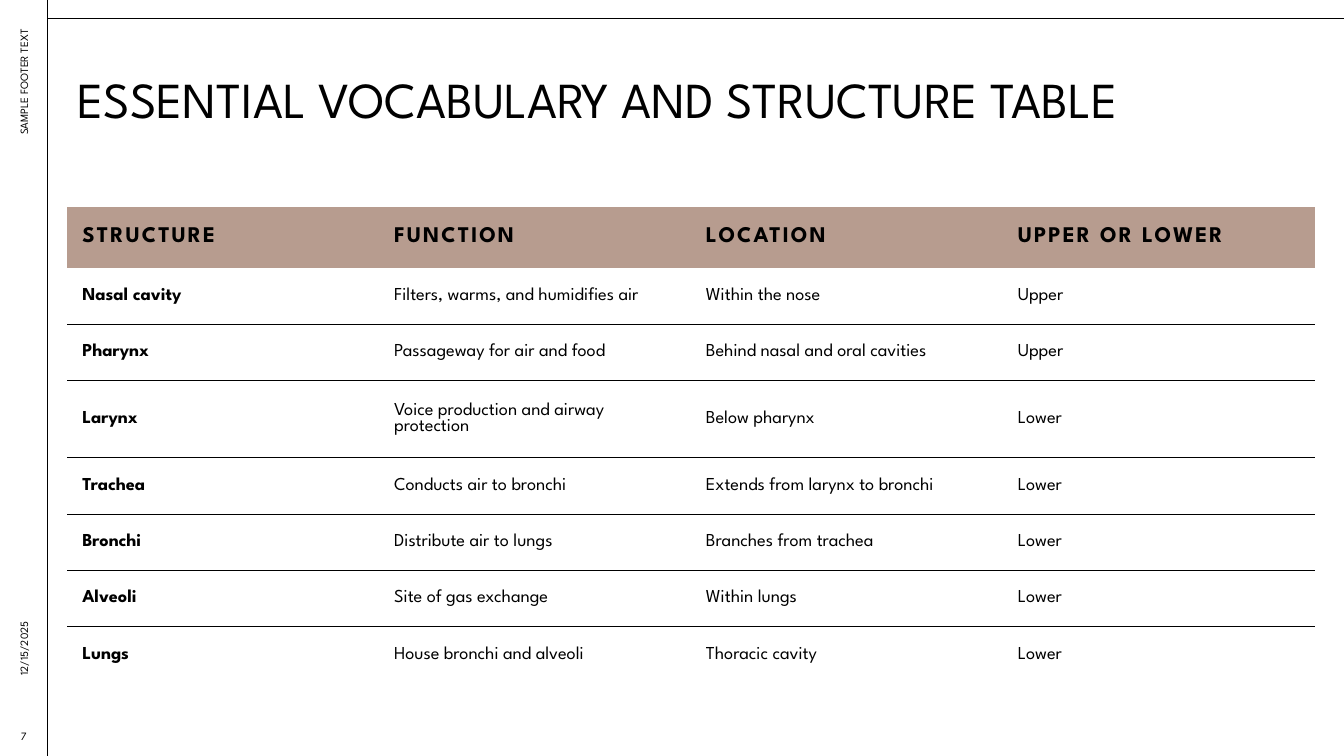
from lxml.etree import SubElement
from pptx import Presentation
from pptx.dml.color import RGBColor
from pptx.enum.shapes import MSO_CONNECTOR
from pptx.enum.text import MSO_ANCHOR, MSO_AUTO_SIZE, PP_ALIGN
from pptx.oxml import parse_xml
from pptx.oxml.ns import nsdecls, qn
from pptx.util import Inches, Pt

BLACK = RGBColor(0x00, 0x00, 0x00)
CLAY = RGBColor(0xB7, 0x9C, 0x8F)
FONT = "League Spartan"
PLAIN = "{2D5ABB26-0587-4C30-8999-92F81FD0307C}"  # table style without grid

# The grid: 160 columns by 90 rows of square cells
COLS, ROWS = 160, 90
RAIL = 5.64   # width of the strip on the left
LEFT = 8
WIDE = 148.5
HEAD, ROW, TALL = 7.3, 6.7, 9.2

VOCAB = [
    ("STRUCTURE", "FUNCTION", "LOCATION", "UPPER OR LOWER"),
    ("Nasal cavity", "Filters, warms, and humidifies air", "Within the nose", "Upper"),
    ("Pharynx", "Passageway for air and food", "Behind nasal and oral cavities", "Upper"),
    ("Larynx", "Voice production and airway protection", "Below pharynx", "Lower"),
    ("Trachea", "Conducts air to bronchi", "Extends from larynx to bronchi", "Lower"),
    ("Bronchi", "Distribute air to lungs", "Branches from trachea", "Lower"),
    ("Alveoli", "Site of gas exchange", "Within lungs", "Lower"),
    ("Lungs", "House bronchi and alveoli", "Thoracic cavity", "Lower"),
]
HIGH = [HEAD] + [TALL if row[0] == "Larynx" else ROW for row in VOCAB[1:]]


class Page:
    def __init__(self, deck):
        self.unit = deck.slide_width / COLS
        self.slide = deck.slides.add_slide(deck.slide_layouts[5])
        self.shapes = self.slide.shapes

    def grid(self, *cells):
        return [round(cell * self.unit) for cell in cells]

    def style(self, para, size, bold=False):
        font = para.font
        font.name, font.size, font.bold = FONT, Pt(size), bold
        font.color.rgb = BLACK

    def line(self, *ends):
        rule = self.shapes.add_connector(MSO_CONNECTOR.STRAIGHT, *self.grid(*ends))
        rule.line.color.rgb = BLACK
        rule.line.width = Pt(0.5)
        SubElement(rule._element.spPr, qn("a:effectLst"))

    def title(self, text, *box):
        head = self.shapes.title
        head.left, head.top, head.width, head.height = self.grid(*box)
        frame = head.text_frame
        frame.text = text
        frame.auto_size = MSO_AUTO_SIZE.NONE
        frame.vertical_anchor = MSO_ANCHOR.TOP
        para = frame.paragraphs[0]
        para.alignment = PP_ALIGN.LEFT
        para.line_spacing = 0.9
        self.style(para, 36)

    def label(self, text, top, high, align, turn=0):
        """Put small text in the left strip; a turned one reads upward."""
        wide, tall = (high, RAIL) if turn else (RAIL, high)
        box = self.shapes.add_textbox(*self.grid(
            (RAIL - wide) / 2, top + (high - tall) / 2, wide, tall))
        box.rotation = turn
        frame = box.text_frame
        frame.text = text
        frame.word_wrap = True
        frame.vertical_anchor = MSO_ANCHOR.MIDDLE
        para = frame.paragraphs[0]
        para.alignment = align
        para.space_after = Pt(6)
        self.style(para, 8)

    def table(self, data, left, top, wide, highs):
        count = len(data[0])
        frame = self.shapes.add_table(
            len(data), count, *self.grid(left, top, wide, sum(highs)))
        table = frame.table
        table.horz_banding = False
        table._tbl.tblPr.find(qn("a:tableStyleId")).text = PLAIN
        for col in table.columns:
            col.width = self.grid(wide / count)[0]
        for i, (row, texts) in enumerate(zip(table.rows, data)):
            row.height = self.grid(highs[i])[0]
            for j, (cell, text) in enumerate(zip(row.cells, texts)):
                self.cell(cell, text, i == 0, j == 0)
                if 0 < i < len(data) - 1:
                    self.under(cell)

    def cell(self, cell, text, head, first):
        cell.text = text
        cell.vertical_anchor = MSO_ANCHOR.MIDDLE
        cell.margin_left = cell.margin_right = Inches(0.15)
        cell.margin_top = cell.margin_bottom = Inches(0.15)
        para = cell.text_frame.paragraphs[0]
        self.style(para, 16 if head else 13, head or first)
        if head:
            cell.fill.solid()
            cell.fill.fore_color.rgb = CLAY
            para.runs[0].font._element.set("spc", "150")
        else:
            cell.fill.background()

    def under(self, cell):
        """Draw the bottom border of a cell."""
        edge = parse_xml(
            f'<a:lnB {nsdecls("a")} w="{Pt(0.5)}"><a:solidFill>'
            f'<a:srgbClr val="{BLACK}"/></a:solidFill></a:lnB>')
        cell._tc.get_or_add_tcPr().insert(0, edge)


def main():
    deck = Presentation()
    deck.slide_width, deck.slide_height = Inches(40 / 3), Inches(7.5)
    page = Page(deck)
    page.line(RAIL, 2.2, COLS, 2.2)
    page.line(RAIL, 0, RAIL, ROWS)
    page.title("ESSENTIAL VOCABULARY AND STRUCTURE TABLE", LEFT, 8.3, WIDE, 10)
    page.label("SAMPLE FOOTER TEXT", 2.3, 59.9, PP_ALIGN.RIGHT, 270)
    page.label("12/15/2025", 62, 19.6, PP_ALIGN.LEFT, 270)
    page.label("7", 85.2, 4.8, PP_ALIGN.CENTER)
    page.table(VOCAB, LEFT, 24.6, WIDE, HIGH)
    deck.save("out.pptx")


if __name__ == "__main__":
    main()
